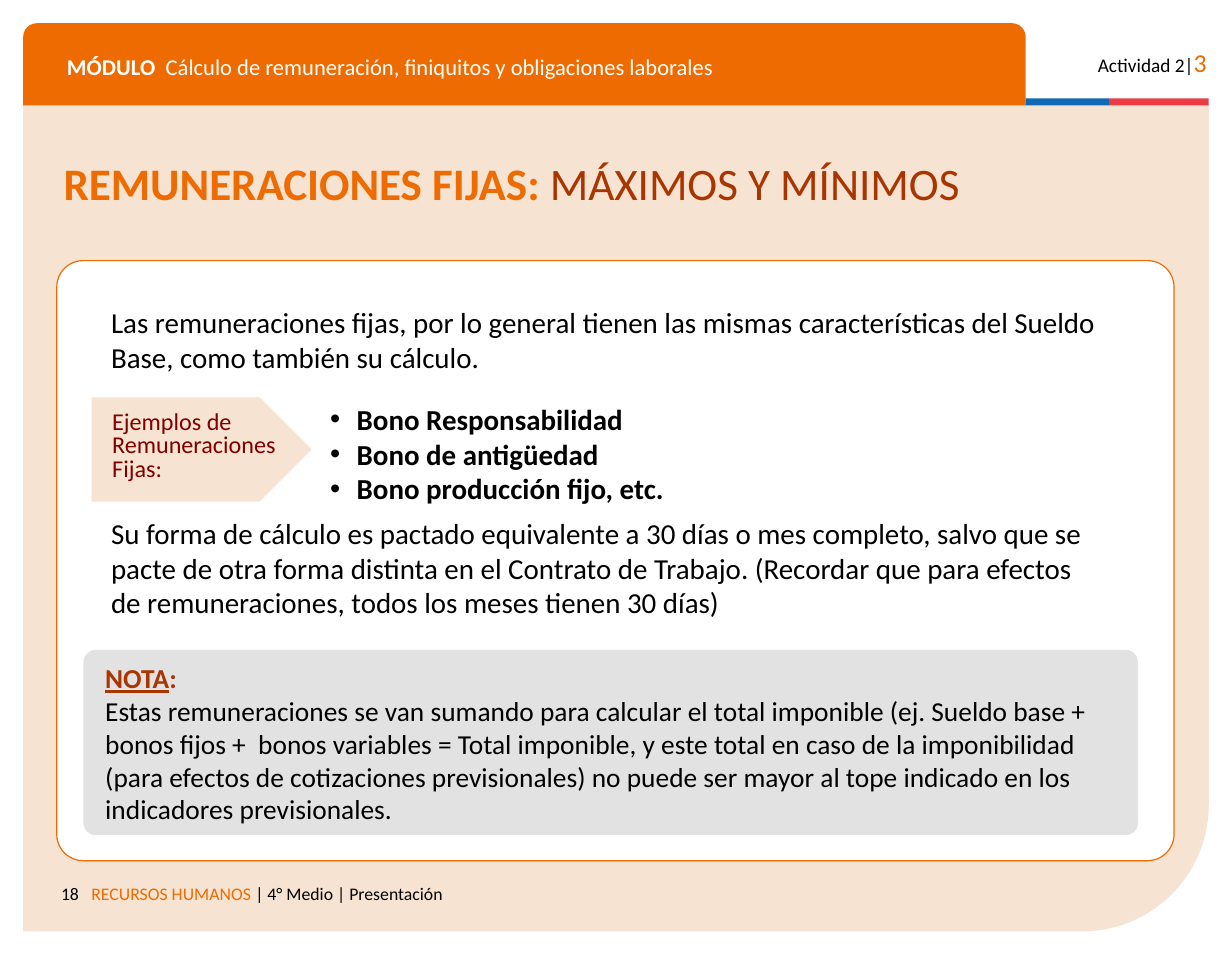
from dataclasses import dataclass

from lxml.etree import SubElement
from pptx import Presentation
from pptx.dml.color import RGBColor
from pptx.enum.shapes import MSO_SHAPE
from pptx.enum.text import MSO_ANCHOR, PP_ALIGN
from pptx.oxml.ns import qn
from pptx.slide import Slide
from pptx.text.text import _Paragraph
from pptx.util import Emu, Pt

PX = 9144  # EMU per px, 100 px to the inch
FONT = "Calibri"
COLORS = {
    "orange": "ED6B00", "rust": "A93501", "maroon": "800000", "cream": "F7E3D1",
    "blue": "0F69B4", "red": "EB3C46", "gray": "D8D8D8", "white": "FFFFFF", "black": "000000",
}


@dataclass(frozen=True)
class Box:
    left: int
    top: int
    width: int
    height: int

    def emu(self) -> list[Emu]:
        return [Emu(px * PX) for px in (self.left, self.top, self.width, self.height)]


@dataclass(frozen=True)
class Panel:
    box: Box
    kind: MSO_SHAPE
    fill: str
    corners: tuple[float, ...] = ()
    line: str | None = None
    opacity: int = 100
    flipped: bool = False


@dataclass(frozen=True)
class Span:
    text: str
    size: int
    color: str = "black"
    bold: bool = False
    underline: bool = False


@dataclass(frozen=True)
class Para:
    spans: tuple[Span, ...]
    before: int = 0
    spacing: float = 1.0
    align: PP_ALIGN = PP_ALIGN.LEFT
    bullet: bool = False


@dataclass(frozen=True)
class TextBlock:
    box: Box
    paras: tuple[Para, ...]
    inset: int = 5  # top and bottom


def rgb(name: str) -> RGBColor:
    return RGBColor.from_string(COLORS[name])


def draw_panel(slide: Slide, panel: Panel) -> None:
    shape = slide.shapes.add_shape(panel.kind, *panel.box.emu())
    shape.shadow.inherit = False
    for index, corner in enumerate(panel.corners):
        shape.adjustments[index] = corner
    shape.fill.solid()
    shape.fill.fore_color.rgb = rgb(panel.fill)
    properties = shape._element.spPr
    if panel.opacity < 100:
        color = properties.find(qn("a:solidFill")).find(qn("a:srgbClr"))
        SubElement(color, qn("a:alpha"), val=str(panel.opacity * 1000))
    if panel.flipped:
        shape.rotation = 180
        properties.find(qn("a:xfrm")).set("flipH", "1")
    if panel.line:
        shape.line.color.rgb = rgb(panel.line)
        shape.line.width = Pt(0.75)
    else:
        shape.line.fill.background()


def add_bullet(paragraph: _Paragraph) -> None:
    properties = paragraph._p.get_or_add_pPr()
    properties.set("marL", str(212 * PX))
    properties.set("indent", str(-23 * PX))
    SubElement(properties, qn("a:buFont"), typeface="Arial")
    SubElement(properties, qn("a:buChar"), char="•")


def draw_text(slide: Slide, block: TextBlock) -> None:
    frame = slide.shapes.add_textbox(*block.box.emu()).text_frame
    frame.word_wrap = True
    frame.vertical_anchor = MSO_ANCHOR.TOP
    frame.margin_left = frame.margin_right = Emu(10 * PX)
    frame.margin_top = frame.margin_bottom = Emu(block.inset * PX)
    for index, para in enumerate(block.paras):
        paragraph = frame.add_paragraph() if index else frame.paragraphs[0]
        paragraph.alignment = para.align
        paragraph.line_spacing = para.spacing
        paragraph.space_before = Pt(para.before)
        if para.bullet:
            add_bullet(paragraph)
        for span in para.spans:
            run = paragraph.add_run()
            run.text = span.text
            run.font.name = FONT
            run.font.size = Pt(span.size)
            run.font.bold = span.bold
            run.font.underline = span.underline
            run.font.color.rgb = rgb(span.color)


PANELS = (
    Panel(Box(20, 90, 1023, 714), MSO_SHAPE.ROUND_1_RECTANGLE, "cream", (0.153,), flipped=True),
    Panel(Box(20, 20, 865, 71), MSO_SHAPE.ROUND_2_SAME_RECTANGLE, "orange", (0.167, 0)),
    Panel(Box(885, 85, 72, 6), MSO_SHAPE.RECTANGLE, "blue"),
    Panel(Box(957, 85, 86, 6), MSO_SHAPE.RECTANGLE, "red"),
    Panel(Box(49, 225, 964, 518), MSO_SHAPE.ROUNDED_RECTANGLE, "white", (0.044,), line="orange"),
    Panel(Box(79, 343, 190, 90), MSO_SHAPE.PENTAGON, "cream", (0.5,)),
    Panel(Box(72, 561, 910, 160), MSO_SHAPE.ROUNDED_RECTANGLE, "gray", (0.068,), opacity=74),
)

BONUSES = ("Bono Responsabilidad", "Bono de antigüedad", "Bono producción fijo, etc.")

TEXTS = (
    TextBlock(Box(20, 753, 58, 29), (Para((Span("18", 11),), align=PP_ALIGN.RIGHT),), inset=10),
    TextBlock(Box(69, 753, 714, 38), (Para((
        Span("RECURSOS HUMANOS ", 11, "orange"),
        Span("| 4° Medio | Presentación", 11),
    )),), inset=10),
    TextBlock(Box(48, 38, 814, 35), (Para((
        Span("MÓDULO  ", 14, "white", bold=True),
        Span("Cálculo de remuneración, finiquitos y obligaciones laborales", 14, "white"),
    ), spacing=0.9),), inset=10),
    TextBlock(Box(923, 30, 128, 38), (Para((
        Span("Actividad 2|", 12),
        Span("3", 16, "orange"),
    ), align=PP_ALIGN.RIGHT),), inset=10),
    TextBlock(Box(45, 129, 989, 57), (Para((
        Span("REMUNERACIONES FIJAS: ", 28, "orange", bold=True),
        Span("MÁXIMOS Y MÍNIMOS", 28, "rust"),
    )),)),
    TextBlock(Box(81, 566, 884, 153), (
        Para((
            Span("NOTA", 17, "rust", bold=True, underline=True),
            Span(":", 17, "rust", bold=True),
        ), before=5),
        Para((Span(
            "Estas remuneraciones se van sumando para calcular el total imponible (ej. Sueldo base + "
            "bonos fijos +  bonos variables = Total imponible, y este total en caso de la imponibilidad "
            "(para efectos de cotizaciones previsionales) no puede ser mayor al tope indicado en los "
            "indicadores previsionales.", 17),)),
    )),
    TextBlock(Box(86, 258, 877, 323), (
        Para((Span(
            "Las remuneraciones fijas, por lo general tienen las mismas características del Sueldo "
            "Base, como también su cálculo.", 18),), before=6),
        *(Para((Span(bonus, 18, bold=True),), before=0 if index else 17, bullet=True)
          for index, bonus in enumerate(BONUSES)),
        Para((Span(
            "Su forma de cálculo es pactado equivalente a 30 días o mes completo, salvo que se "
            "pacte de otra forma distinta en el Contrato de Trabajo. (Recordar que para efectos "
            "de remuneraciones, todos los meses tienen 30 días)", 18),), before=6),
    )),
    TextBlock(Box(87, 351, 186, 72), (
        Para((Span("Ejemplos de Remuneraciones Fijas:", 15, "maroon"),), spacing=0.8),
    )),
)


def main() -> None:
    presentation = Presentation()
    presentation.slide_width = Emu(1063 * PX)
    presentation.slide_height = Emu(827 * PX)
    slide = presentation.slides.add_slide(presentation.slide_layouts[6])
    for panel in PANELS:
        draw_panel(slide, panel)
    for block in TEXTS:
        draw_text(slide, block)
    presentation.save("out.pptx")


if __name__ == "__main__":
    main()
